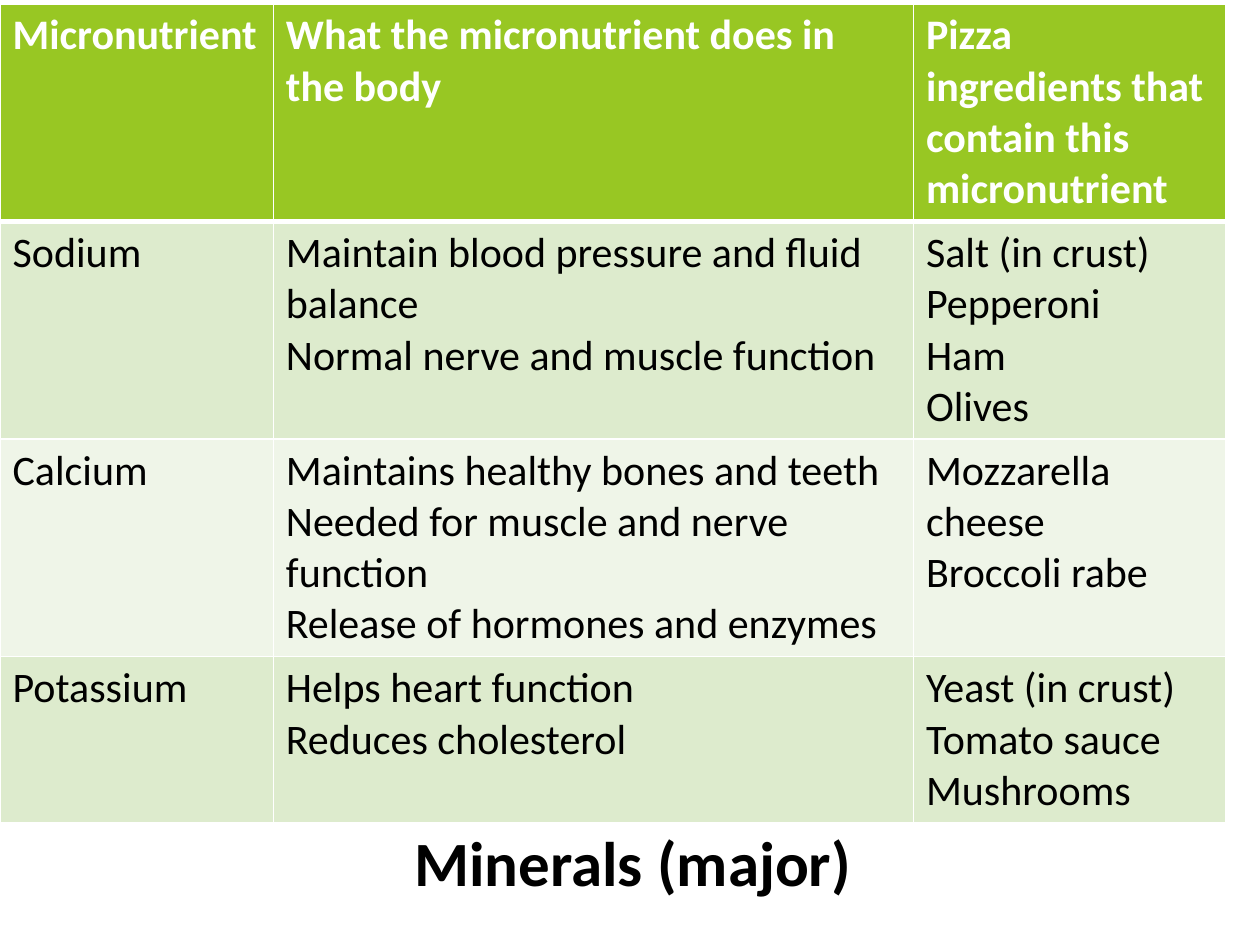
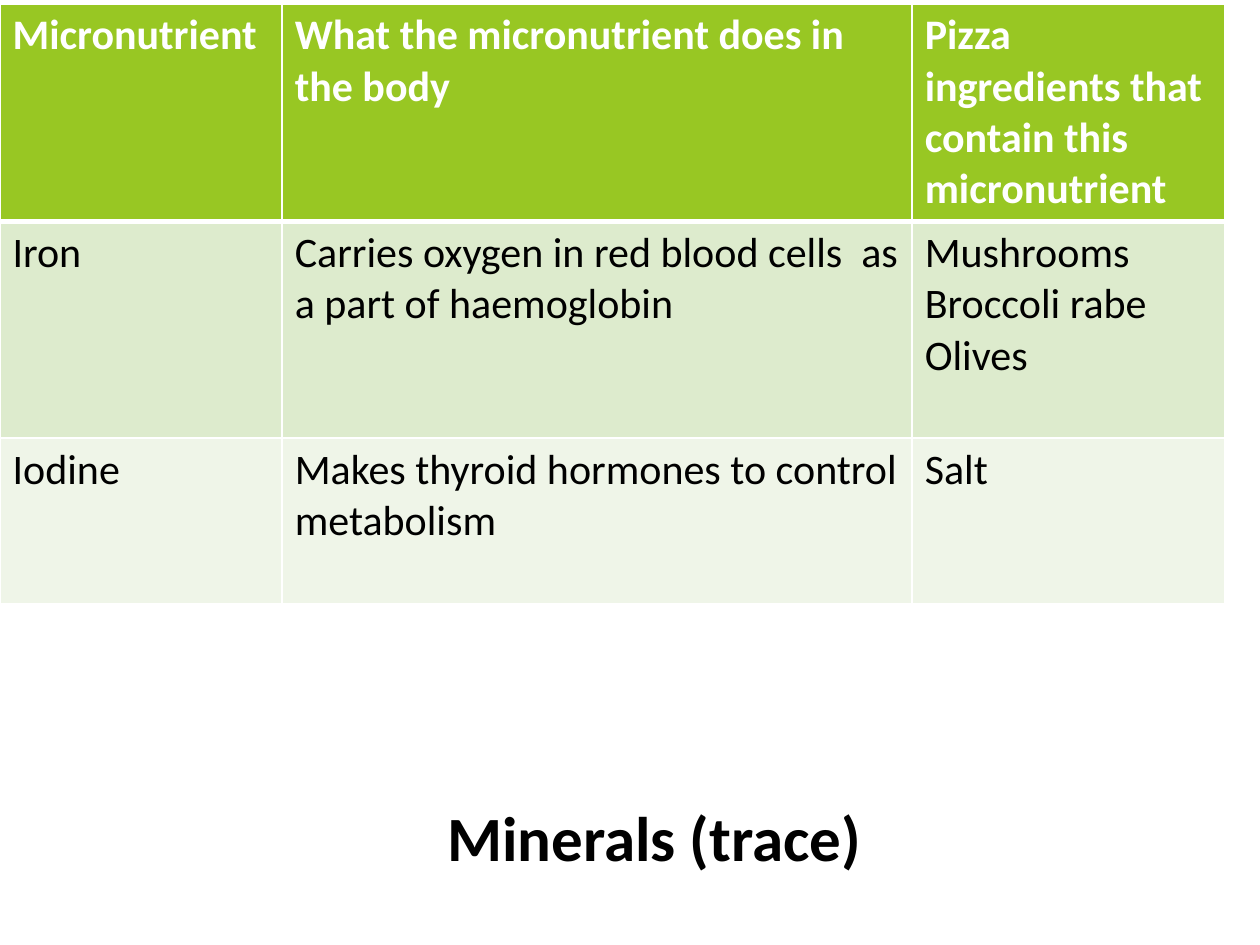
from lxml.etree import SubElement as Sub
from pptx import Presentation as Deck
from pptx.dml.color import RGBColor as Rgb
from pptx.enum.text import MSO_ANCHOR as Anchor, MSO_AUTO_SIZE as Fit, PP_ALIGN as Align
from pptx.oxml.ns import qn
from pptx.util import Inches, Pt

# Shared look
WHITE, BLACK = "FFFFFF", "000000"
GREEN, BANDS = "98C723", ["EFF5E8", "DDEBCD"]
HEAD = {"name": "Calibri", "size": Pt(24), "bold": True}
BODY = HEAD | {"bold": False}
TITLE = HEAD | {"size": Pt(36)}
FRAME = {"word_wrap": True, "auto_size": Fit.NONE, "vertical_anchor": Anchor.MIDDLE}
LINE, PAD = 0.405, 0.1  # height of a text line, cell padding, in inches

deck = Deck()
deck.slide_width, deck.slide_height = Inches(10), Inches(7.5)
WIDE, HIGH = deck.slide_width / 100, deck.slide_height / 100


def style(para, form, color):
    for key, value in form.items():
        setattr(para.font, key, value)
    para.font.color.rgb = Rgb.from_string(color)


def edge(cell, side, width):
    line = Sub(cell._tc.get_or_add_tcPr(), qn("a:ln" + side), w=str(Pt(width)))
    Sub(Sub(line, qn("a:solidFill")), qn("a:srgbClr"), val=WHITE)


# Content: boxes, columns in percent of the slide, lines of text per row
TOP = ["Micronutrient", "What the micronutrient does in the body",
       "Pizza ingredients that contain this micronutrient"]
PAGES = [
    {"title": "Minerals (major) ", "box": (28, 82.53, 41.7, 17.2),
     "cols": [21.7, 50.8, 24.8], "lines": [4, 4, 4, 3],
     "rows": [
         ["Sodium",
          "Maintain blood pressure and fluid balance\nNormal nerve and muscle function",
          "Salt (in crust)\nPepperoni\nHam\nOlives"],
         ["Calcium",
          "Maintains healthy bones and teeth\nNeeded for muscle and nerve function\n"
          "Release of hormones and enzymes",
          "Mozzarella cheese\nBroccoli rabe"],
         ["Potassium", "Helps heart function\nReduces cholesterol",
          "Yeast (in crust)\nTomato sauce\nMushrooms"]]},
    {"title": "Minerals (trace) ", "box": (31.9, 77.33, 38.6, 22.4),
     "cols": [22.4, 50, 24.8], "lines": [4, 4, 3],
     "rows": [
         ["Iron", "Carries oxygen in red blood cells  as a part of haemoglobin",
          "Mushrooms\nBroccoli rabe\nOlives"],
         ["Iodine", "Makes thyroid hormones to control metabolism", "Salt"]]},
]

for page in PAGES:
    slide = deck.slides.add_slide(deck.slide_layouts[5])

    # Title below the table
    title = slide.shapes.title
    left, top, width, height = page["box"]
    title.left, title.width = int(left * WIDE), int(width * WIDE)
    title.top, title.height = int(top * HIGH), int(height * HIGH)
    title.text = page["title"]
    for key, value in FRAME.items():
        setattr(title.text_frame, key, value)
    para = title.text_frame.paragraphs[0]
    para.alignment = Align.RIGHT
    style(para, TITLE, BLACK)

    # Table grid
    rows = [TOP] + page["rows"]
    highs = [Inches(PAD + LINE * count) for count in page["lines"]]
    wides = [int(share * WIDE) for share in page["cols"]]
    table = slide.shapes.add_table(len(rows), len(wides), 0, Inches(0.03),
                                   sum(wides), sum(highs)).table
    for col, wide in zip(table.columns, wides):
        col.width = wide
    for row, high in zip(table.rows, highs):
        row.height = high

    # Cells: header row, then banded rows
    for r, texts in enumerate(rows):
        fill, form, color = (BANDS[r % 2], BODY, BLACK) if r else (GREEN, HEAD, WHITE)
        for c, text in enumerate(texts):
            cell = table.cell(r, c)
            cell.text = text
            for para in cell.text_frame.paragraphs:
                style(para, form, color)
            for side, thick in zip("LRTB", (False, False, r == 1, r == 0)):
                edge(cell, side, 3 if thick else 1)
            cell.fill.solid()
            cell.fill.fore_color.rgb = Rgb.from_string(fill)

deck.save("out.pptx")
